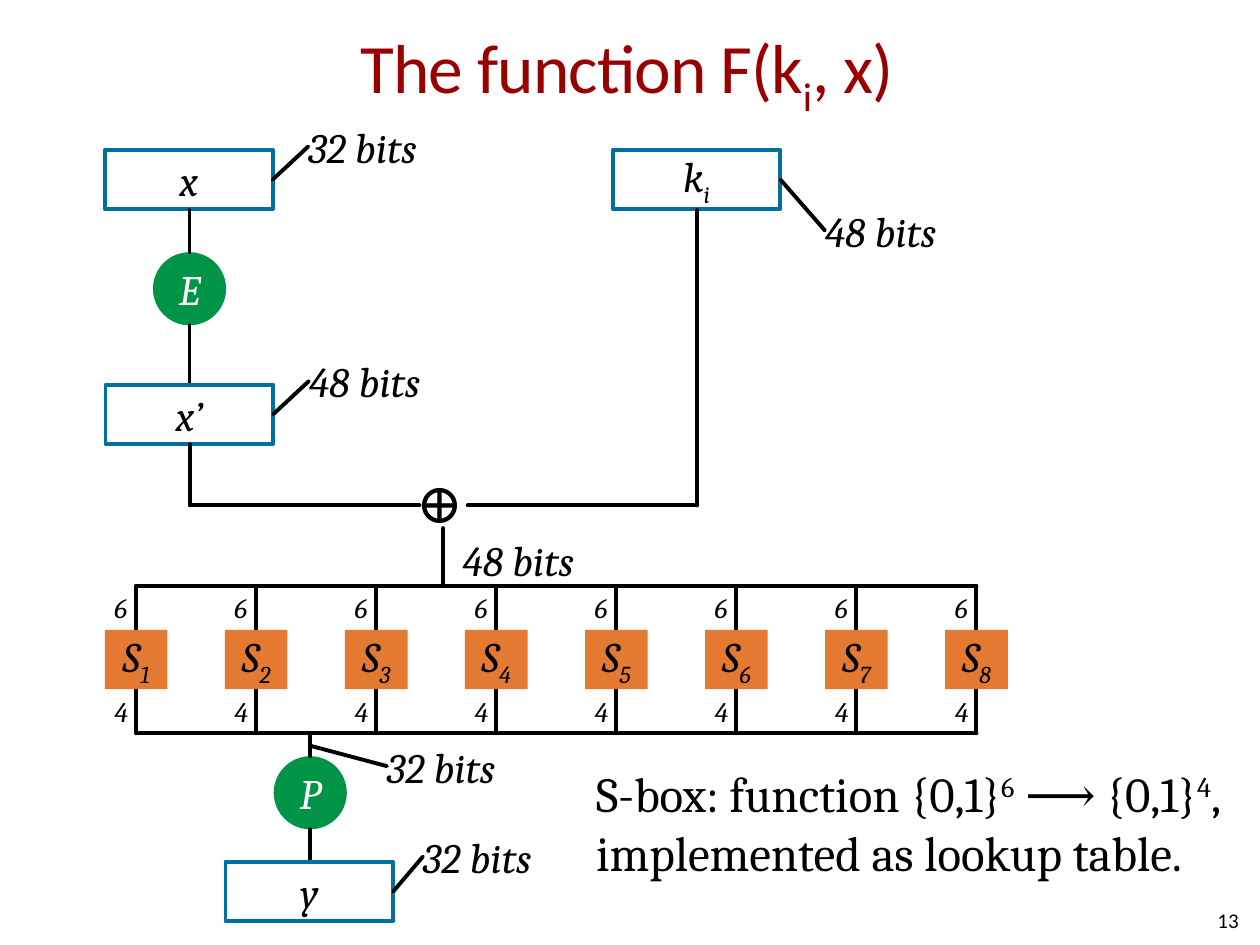
from lxml.etree import SubElement
from pptx import Presentation
from pptx.dml.color import RGBColor
from pptx.enum.shapes import MSO_CONNECTOR, MSO_SHAPE
from pptx.enum.text import MSO_ANCHOR, MSO_AUTO_SIZE, PP_ALIGN
from pptx.oxml.ns import qn
from pptx.util import Pt

COLORS = {"title": "990000", "ink": "000000", "paper": "FFFFFF",
          "outline": "00709E", "permutation": "009446", "sbox": "E47932"}
BLOCK_W, BLOCK_H = 95.8, 33.9
CIRCLE = 41.8
SBOX_W, SBOX_PITCH, SBOX_COUNT = 35.8, 68.6, 8


def color(key):
    return RGBColor.from_string(COLORS[key])


def write(frame, runs, size=24, font="Cambria", ink="ink", italic=True,
          align=PP_ALIGN.LEFT, anchor=MSO_ANCHOR.TOP, wrap=False,
          inset=0, spacing=0):
    frame.word_wrap = wrap
    frame.vertical_anchor = anchor
    frame.margin_left = frame.margin_right = 0
    frame.margin_top = frame.margin_bottom = Pt(inset)
    paragraph = frame.paragraphs[0]
    paragraph.alignment = align
    for content, baseline in [(runs, 0)] if isinstance(runs, str) else runs:
        for row, piece in enumerate(content.split("\n")):
            if row:
                paragraph.add_line_break()
            run = paragraph.add_run()
            run.text = piece
            run.font.size = Pt(size)
            run.font.name = font
            run.font.italic = italic
            run.font.color.rgb = color(ink)
            properties = run.font._element
            if baseline:
                properties.set("baseline", str(baseline * 1000))
            if spacing:
                properties.set("spc", str(int(spacing * 100)))


def label(slide, left, top, width, height, runs, grow=True, **text_format):
    box = slide.shapes.add_textbox(Pt(left), Pt(top), Pt(width), Pt(height))
    write(box.text_frame, runs, **text_format)
    if grow:
        box.text_frame.auto_size = MSO_AUTO_SIZE.SHAPE_TO_FIT_TEXT


def wire(slide, *points):
    for start, end in zip(points, points[1:]):
        line = slide.shapes.add_connector(
            MSO_CONNECTOR.STRAIGHT, *(Pt(value) for value in (*start, *end)))
        line.line.width = Pt(2.25)
        line.line.color.rgb = color("ink")
        properties = line._element.spPr
        properties.find(qn("a:ln")).set("cap", "rnd")
        SubElement(properties, qn("a:effectLst"))


def node(slide, preset, left, top, width, height, runs, fill, outline=None,
         ink="ink"):
    shape = slide.shapes.add_shape(
        preset, Pt(left), Pt(top), Pt(width), Pt(height))
    shape.shadow.inherit = False
    shape.fill.solid()
    shape.fill.fore_color.rgb = color(fill)
    if outline:
        shape.line.color.rgb = color(outline)
        shape.line.width = Pt(2.25)
    else:
        shape.line.fill.background()
    write(shape.text_frame, runs, ink=ink, align=PP_ALIGN.CENTER,
          anchor=MSO_ANCHOR.MIDDLE, wrap=True)


def bits_label(slide, left, top, bits):
    label(slide, left, top, 67.7, 29, f"{bits} bits")


def block(slide, left, top, name, bits, bits_dx, bits_dy):
    node(slide, MSO_SHAPE.RECTANGLE, left, top, BLOCK_W, BLOCK_H, name,
         "paper", "outline")
    right = left + BLOCK_W
    bits_label(slide, right + bits_dx, top + bits_dy - 14.5, bits)
    wire(slide, (right + bits_dx, top + bits_dy), (right, top + BLOCK_H / 2))


def permutation(slide, center, top, name, rise, drop):
    node(slide, MSO_SHAPE.OVAL, center - CIRCLE / 2, top, CIRCLE, CIRCLE,
         name, "permutation", ink="paper")
    wire(slide, (center, top - rise), (center, top))
    wire(slide, (center, top + CIRCLE), (center, top + CIRCLE + drop))


def expansion(slide, left, top):
    block(slide, left, top, "x", 32, 20.4, -2)
    permutation(slide, left + BLOCK_W / 2 + 0.4, top + 58.4, "E", 24, 34)
    block(slide, left + 0.3, top + 134.1, "x’", 48, 20.4, -2)


def mixing(slide, left, top, width, key_top):
    right = left + width
    wire(slide, (left, top - 35), (left, top), (left + 131, top))
    label(slide, left + 129.2, top - 21.6, 32, 38.8, "⊕", size=32,
          italic=False)
    wire(slide, (left + 158.6, top), (right, top), (right, key_top))
    wire(slide, (left + 144.7, top + 13), (left + 144.7, top + 46.1))
    bits_label(slide, left + 155.6, top + 16.6, 48)


def substitution(slide, left, top):
    sbox_top, sbox_bottom, bottom = top + 25.2, top + 59, top + 84.2
    last = left + SBOX_PITCH * (SBOX_COUNT - 1)
    for rail in (top, bottom):
        wire(slide, (left, rail), (last, rail))
    for index in range(SBOX_COUNT):
        center = left + index * SBOX_PITCH
        for start, end, count in ((top, sbox_top, "6"),
                                  (sbox_bottom, bottom, "4")):
            wire(slide, (center, start), (center, end))
            label(slide, center - 12.4, start + 2.9, 8.6, 19.4, count,
                  size=16)
        node(slide, MSO_SHAPE.RECTANGLE, center - SBOX_W / 2, sbox_top,
             SBOX_W, sbox_bottom - sbox_top,
             [("S", 0), (str(index + 1), -25)], "sbox")


def output(slide, left, top):
    center = left + BLOCK_W / 2 + 0.5
    permutation(slide, center, top - 60.4, "P", 13.2, 18.3)
    bits_label(slide, center + 43.8, top - 69, 32)
    wire(slide, (center + 0.5, top - 66.2), (center + 43.8, top - 54.7))
    block(slide, left, top, "y", 32, 17, -3)


def title(slide, left, top, width, height):
    heading = slide.shapes.title
    heading.left, heading.top = Pt(left), Pt(top)
    heading.width, heading.height = Pt(width), Pt(height)
    write(heading.text_frame, [("The function F(k", 0), ("i", -25), (", x)", 0)],
          size=39.6, font="Calibri", ink="title", italic=False,
          align=PP_ALIGN.CENTER, anchor=MSO_ANCHOR.MIDDLE, wrap=True,
          inset=3.6, spacing=-0.5)
    heading.text_frame.auto_size = MSO_AUTO_SIZE.NONE


def main():
    deck = Presentation()
    deck.slide_width, deck.slide_height = Pt(720), Pt(540)
    slide = deck.slides.add_slide(deck.slide_layouts[5])
    title(slide, 23.8, 12.2, 668.9, 57.6)
    expansion(slide, 60, 85.7)
    block(slide, 350.2, 85.7, [("k", 0), ("i", -25)], 48, 25.4, 46)
    mixing(slide, 108.7, 288.8, 289.5, 120)
    substitution(slide, 77.8, 334.8)
    output(slide, 128.9, 492.5)
    label(slide, 340.6, 436.3, 384.5, 67.7,
          [("S-box: function {0,1}", 0), ("6", 30), (" ⟶ {0,1}", 0),
           ("4", 30), (", \nimplemented as lookup table.", 0)],
          size=28, italic=False)
    label(slide, 540, 511.2, 167.8, 28.8, "13", size=12, font="Calibri",
          italic=False, align=PP_ALIGN.RIGHT, anchor=MSO_ANCHOR.MIDDLE,
          wrap=True, grow=False)
    deck.save("out.pptx")


if __name__ == "__main__":
    main()
